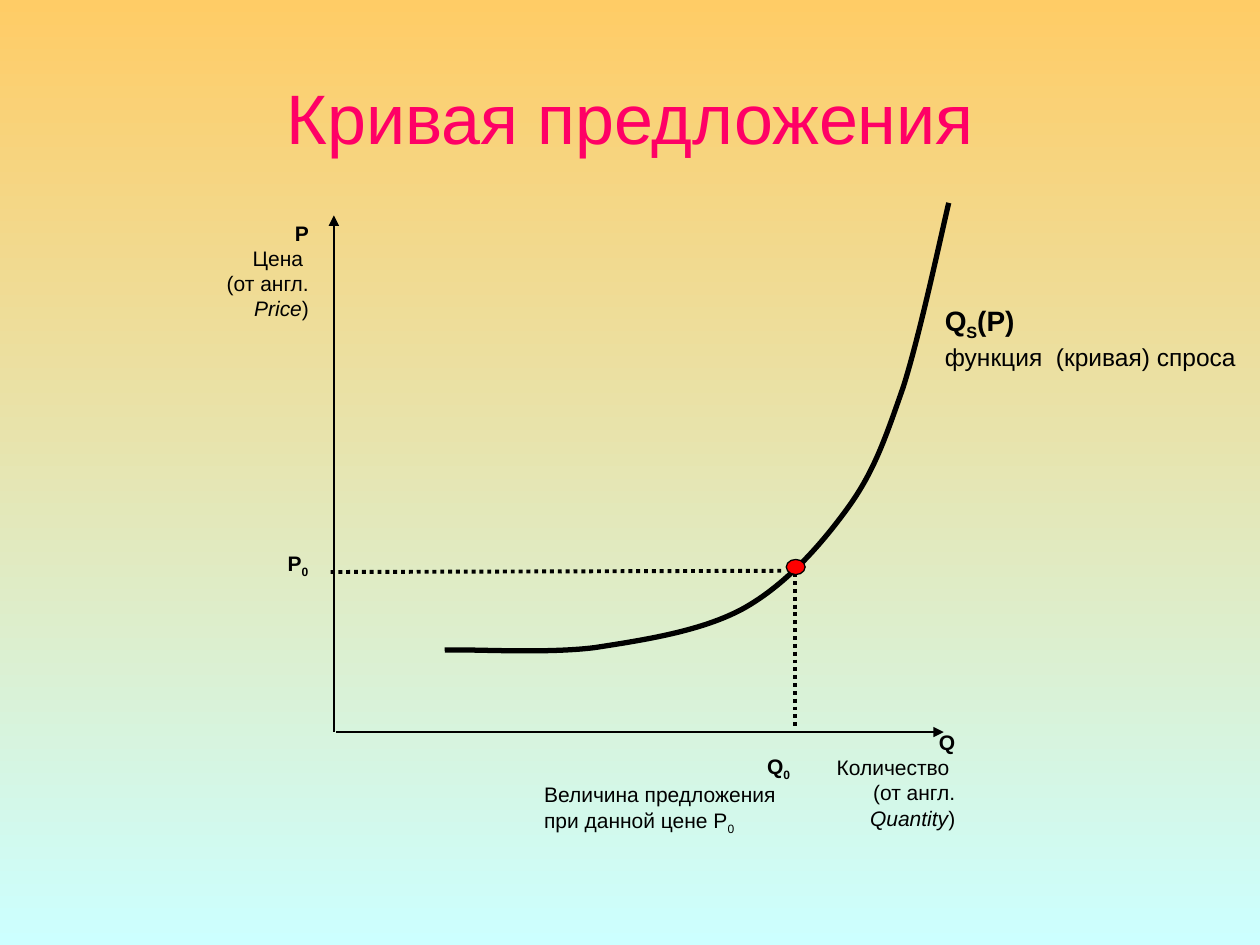
from dataclasses import dataclass

from lxml.etree import SubElement
from pptx import Presentation
from pptx.dml.color import RGBColor
from pptx.enum.dml import MSO_LINE
from pptx.enum.shapes import MSO_CONNECTOR, MSO_SHAPE
from pptx.enum.text import MSO_ANCHOR, PP_ALIGN
from pptx.oxml.ns import qn
from pptx.util import Inches, Pt


@dataclass(frozen=True)
class Theme:
    font: str = "Arial"
    title_color: str = "FF0066"
    ink: str = "000000"
    point: str = "FF0000"
    sky: tuple = ("FFCC66", "CCFFFF")
    title_size: int = 40
    curve_size: int = 16
    note_size: int = 14
    label_size: int = 12


THEME = Theme()
CELL = Inches(0.1)  # the slide is a grid of 100 columns by 75 rows


@dataclass(frozen=True)
class Box:
    left: float
    top: float
    width: float
    height: float

    def inner(self, left, top, width, height):
        return Box(self.left + left, self.top + top, width, height)

    def point(self, x, y):
        return round((self.left + x) * CELL), round((self.top + y) * CELL)

    def frame(self):
        return (*self.point(0, 0), round(self.width * CELL), round(self.height * CELL))


def add_span(para, text, size=THEME.label_size, color=THEME.ink,
             bold=False, italic=False, subscript=False):
    span = para.add_run()
    span.text = text
    font = span.font
    font.name, font.size = THEME.font, Pt(size)
    font.bold, font.italic = bold, italic
    font.color.rgb = RGBColor.from_string(color)
    if subscript:
        span._r.get_or_add_rPr().set("baseline", "-25000")


def add_label(page, box, *paragraphs):
    """Each paragraph is an alignment followed by (text, format) spans."""
    frame = page.shapes.add_textbox(*box.frame()).text_frame
    frame.word_wrap = True
    for index, (align, *spans) in enumerate(paragraphs):
        para = frame.paragraphs[0] if index == 0 else frame.add_paragraph()
        para.alignment = align
        for text, style in spans:
            add_span(para, text, **style)


def set_line(shape, width):
    shape.line.color.rgb = RGBColor.from_string(THEME.ink)
    shape.line.width = Pt(width)


def add_line(page, box, start, end, width, arrow=False, dotted=False):
    line = page.shapes.add_connector(
        MSO_CONNECTOR.STRAIGHT, *box.point(*start), *box.point(*end))
    set_line(line, width)
    if dotted:
        line.line.dash_style = MSO_LINE.ROUND_DOT
    properties = line._element.spPr
    if arrow:
        SubElement(properties.find(qn("a:ln")), qn("a:tailEnd"), type="triangle")
    SubElement(properties, qn("a:effectLst"))


def add_curve(page, box, points, width):
    """Draw a Bezier curve: a start point, then three points per segment."""
    start, *rest = [box.point(*point) for point in points]
    builder = page.shapes.build_freeform(*start)
    builder.add_line_segments(rest, close=False)
    curve = builder.convert_to_shape()
    curve.shadow.inherit = False
    curve.fill.background()
    set_line(curve, width)
    # Join each three straight steps into one cubic segment
    steps = curve._element.xpath(".//a:lnTo")
    outline = steps[0].getparent()
    for first in range(0, len(steps), 3):
        segment = SubElement(outline, qn("a:cubicBezTo"))
        for step in steps[first:first + 3]:
            segment.append(step[0])
            outline.remove(step)


def paint_background(page):
    fill = page.background.fill
    fill.gradient()
    fill.gradient_angle = 270
    for stop, color in zip(fill.gradient_stops, THEME.sky):
        stop.color.rgb = RGBColor.from_string(color)


def place_title(page, box, text):
    title = page.shapes.title
    title.left, title.top, title.width, title.height = box.frame()
    title.text_frame.vertical_anchor = MSO_ANCHOR.MIDDLE
    para = title.text_frame.paragraphs[0]
    para.alignment = PP_ALIGN.CENTER
    add_span(para, text, size=THEME.title_size, color=THEME.title_color)


def place_axis_label(page, box, symbol, meaning, english):
    right = PP_ALIGN.RIGHT
    add_label(page, box,
              (right, (symbol, {"bold": True})),
              (right, (meaning, {})),
              (right, ("(от англ.", {})),
              (right, (english, {"italic": True}), (")", {})))


def place_plot(page, box):
    # Axes
    add_line(page, box, (0, box.height), (0, 0), 1.5, arrow=True)
    add_line(page, box, (0.2, box.height), (box.width, box.height), 1.5, arrow=True)

    # Supply curve
    add_curve(page, box, [
        (8.8, 34.5),
        (10.8, 34.4), (16.7, 34.8), (20.7, 34.3),
        (24.6, 33.7), (29.2, 33), (32.5, 31.2),
        (35.9, 29.3), (38.7, 26.1), (40.8, 23.2),
        (42.9, 20.3), (43.8, 17.6), (45.2, 13.6),
        (46.5, 9.5), (48.1, 2), (48.8, -1)], 3)

    # Axis labels
    place_axis_label(page, box.inner(-11.2, -0.1, 10.2, 11.7), "P", "Цена ", "Price")
    place_axis_label(page, box.inner(34.2, 40.3, 16.1, 10.2),
                     "Q", "Количество ", "Quantity")

    # Dotted guides to the chosen point
    add_line(page, box, (36.6, 28.4), (36.6, 40.7), 2.25, dotted=True)
    add_line(page, box, (35.5, 28.2), (-0.3, 28.3), 2.25, dotted=True)

    # Values at the chosen point
    bold, low = {"bold": True}, {"subscript": True}
    bold_low = bold | low
    add_label(page, box.inner(15.7, 42.2, 21.5, 10.8),
              (PP_ALIGN.RIGHT, ("Q", bold), ("0", bold_low)),
              (PP_ALIGN.LEFT, ("Величина предложения при данной цене P", {}), ("0", low)))
    add_label(page, box.inner(-6.9, 26.1, 8.1, 4.1),
              (PP_ALIGN.CENTER, ("P", bold), ("0", bold_low)))

    # Point on the curve
    point = page.shapes.add_shape(
        MSO_SHAPE.OVAL, *box.inner(35.9, 27.3, 1.5, 1.2).frame())
    point.shadow.inherit = False
    point.fill.solid()
    point.fill.fore_color.rgb = RGBColor.from_string(THEME.point)
    set_line(point, 0.75)

    # Curve name
    name = bold | {"size": THEME.curve_size}
    add_label(page, box.inner(47.5, 6.5, 26, 6.1),
              (PP_ALIGN.LEFT, ("Q", name), ("S", name | low), ("(P)", name)),
              (PP_ALIGN.LEFT, ("функция  (кривая) спроса", {"size": THEME.note_size})))


def main():
    deck = Presentation()
    deck.slide_width, deck.slide_height = 100 * CELL, 75 * CELL
    page = deck.slides.add_slide(deck.slide_layouts.get_by_name("Title Only"))
    paint_background(page)
    place_title(page, Box(5, 3, 90, 12.5), "Кривая предложения")
    place_plot(page, Box(26.5, 17.1, 48.4, 41))
    deck.save("out.pptx")


if __name__ == "__main__":
    main()
